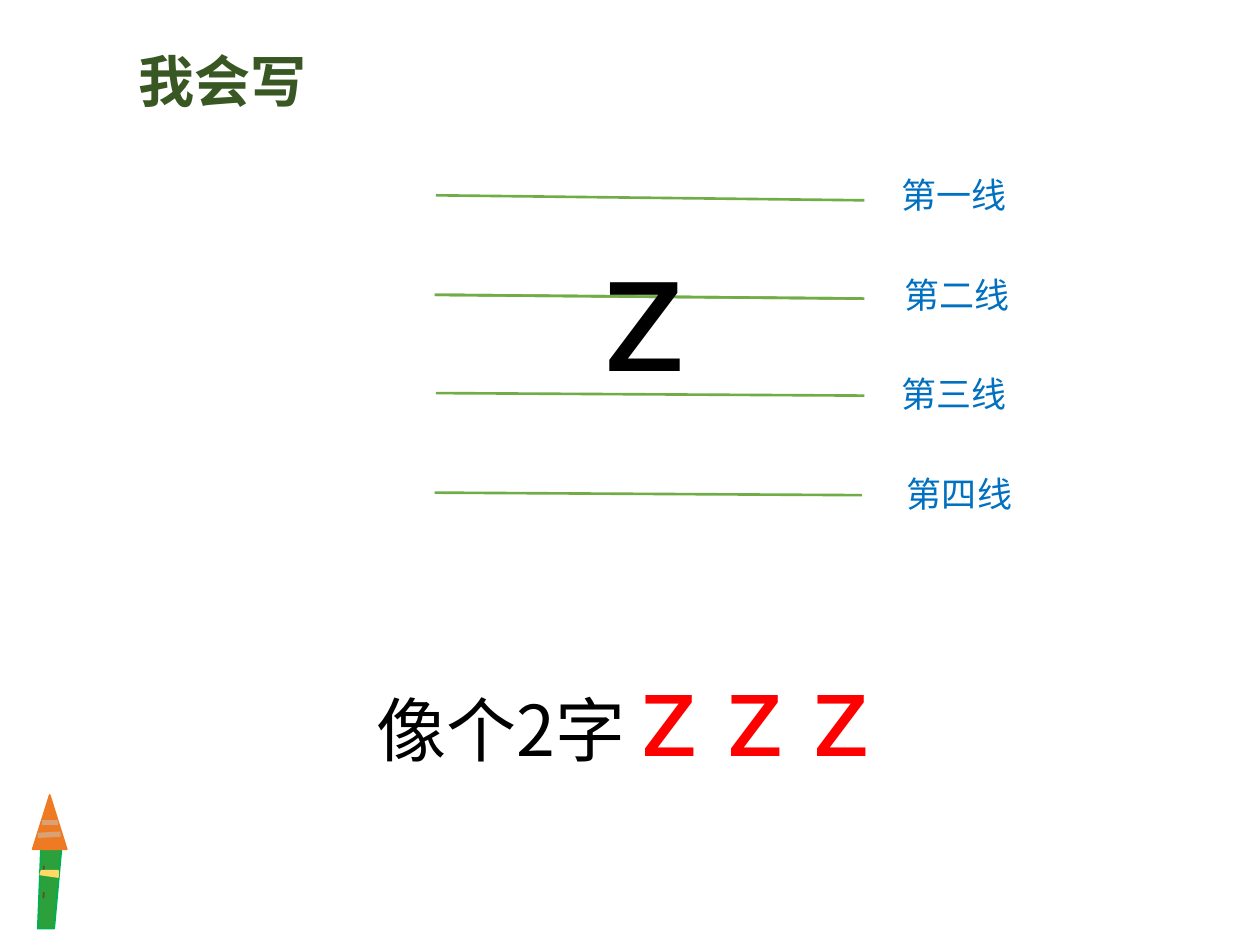
from dataclasses import dataclass

from lxml import etree
from pptx import Presentation
from pptx import util as u
from pptx.dml.color import RGBColor
from pptx.enum import shapes, text
from pptx.oxml.ns import qn


@dataclass(frozen=True)
class Theme:
    chinese: str = "Noto Sans CJK SC"
    latin: str = "Roboto"
    title: str = "385723"
    label: str = "0070C0"
    rule: str = "70AD47"
    ink: str = "000000"
    accent: str = "FF0000"
    barrel: str = "2CA03B"
    barrel_edge: str = "00B050"
    tip: str = "EE7A24"
    spot: str = "69482C"
    band: str = "FFD966"
    stripe: str = "D9A275"
    title_size: int = 32
    label_size: int = 20
    hint_size: int = 40
    sample_size: int = 66
    letter_size: int = 96


THEME = Theme()


def paint(shape, fill, line=None):
    shape.shadow.inherit = False
    shape.fill.solid()
    shape.fill.fore_color.rgb = RGBColor.from_string(fill)
    shape.line.color.rgb = RGBColor.from_string(line or fill)
    shape.line.width = u.Pt(1)


def add_preset(slide, kind, box, color):
    shape = slide.shapes.add_shape(kind, *map(u.Inches, box))
    paint(shape, color)
    return shape


def add_outline(slide, points, fill, line=None):
    corners = [(u.Inches(x), u.Inches(y)) for x, y in points]
    builder = slide.shapes.build_freeform(*corners[0])
    builder.add_line_segments(corners[1:], close=True)
    paint(builder.convert_to_shape(), fill, line)


def add_line(slide, start, end, color, width):
    line = slide.shapes.add_connector(
        shapes.MSO_CONNECTOR.STRAIGHT, *map(u.Inches, start + end))
    line.line.color.rgb = RGBColor.from_string(color)
    line.line.width = u.Pt(width)
    etree.SubElement(line._element.spPr, qn("a:effectLst"))


def add_text(slide, box, runs, wrap=True, indent=0.1):
    """Each run is (wording, font, size, color, bold)."""
    frame = slide.shapes.add_textbox(*map(u.Inches, box)).text_frame
    frame.word_wrap = wrap
    frame.margin_left = u.Inches(indent)
    paragraph = frame.paragraphs[0]
    for wording, font, size, color, bold in runs:
        run = paragraph.add_run()
        run.text = wording
        run.font.name = font
        run.font.size = u.Pt(size)
        run.font.bold = bold
        run.font.color.rgb = RGBColor.from_string(color)
        east_asian = etree.SubElement(run.font._element, qn("a:ea"))
        east_asian.set("typeface", font)
    return paragraph


def add_crayon(slide):
    add_outline(slide, [(0.33, 6.61), (0.49, 6.71), (0.43, 7.37), (0.3, 7.37)],
                THEME.barrel, THEME.barrel_edge)
    add_preset(slide, shapes.MSO_SHAPE.ISOSCELES_TRIANGLE,
               (0.26, 6.31, 0.27, 0.43), THEME.tip)
    for top in (6.87, 7.08):
        spot = add_preset(slide, shapes.MSO_SHAPE.CHORD,
                          (0.26, top, 0.26, 0.09), THEME.spot)
        # Angles are held in 60000ths of a degree, adjustments in 100000ths
        for index, degrees in enumerate((89.45, 132.13)):
            spot.adjustments[index] = degrees * 0.6
        spot.rotation = 90
    add_outline(slide, [(0.33, 6.91), (0.46, 6.91), (0.46, 6.96), (0.32, 6.94)],
                THEME.band)
    add_line(slide, (0.33, 6.53), (0.46, 6.53), THEME.stripe, 3)
    add_line(slide, (0.3, 6.63), (0.48, 6.62), THEME.stripe, 3)


def add_writing_lines(slide):
    rules = [
        ((3.46, 1.55), (6.86, 1.59)),
        ((3.46, 2.34), (6.86, 2.37)),
        ((3.45, 2.34), (6.84, 2.37)),
        ((3.46, 3.12), (6.86, 3.14)),
        ((3.45, 3.91), (6.84, 3.93)),
    ]
    for start, end in rules:
        add_line(slide, start, end, THEME.rule, 1.5)

    # Letter standing on the lines
    add_text(slide, (3.36, 1.57, 3.58, 3.33),
             [("z", THEME.latin, THEME.letter_size, THEME.ink, False)],
             indent=1.42)

    # One label per line, evenly spaced
    for index, (number, left) in enumerate(zip("一二三四", (7.06, 7.08, 7.06, 7.1))):
        add_text(slide, (left, 1.33 + 0.79 * index, 1.3, 0.77),
                 [(f"第{number}线", THEME.chinese, THEME.label_size,
                   THEME.label, False)])


def main():
    presentation = Presentation()
    presentation.slide_width = u.Inches(10)
    presentation.slide_height = u.Inches(7.5)
    slide = presentation.slides.add_slide(presentation.slide_layouts[6])

    add_crayon(slide)

    # Title
    title = add_text(slide, (0.99, 0.32, 1.55, 0.64),
                     [("我会写", THEME.chinese, THEME.title_size,
                       THEME.title, True)], wrap=False)
    title.alignment = text.PP_ALIGN.CENTER

    add_writing_lines(slide)

    # Memory hint with sample letters
    add_text(slide, (2.89, 5.04, 4.75, 1.21),
             [("像个2字 ", THEME.chinese, THEME.hint_size, THEME.ink, False),
              ("z z z", THEME.latin, THEME.sample_size, THEME.accent, False)])

    presentation.save("out.pptx")


if __name__ == "__main__":
    main()
